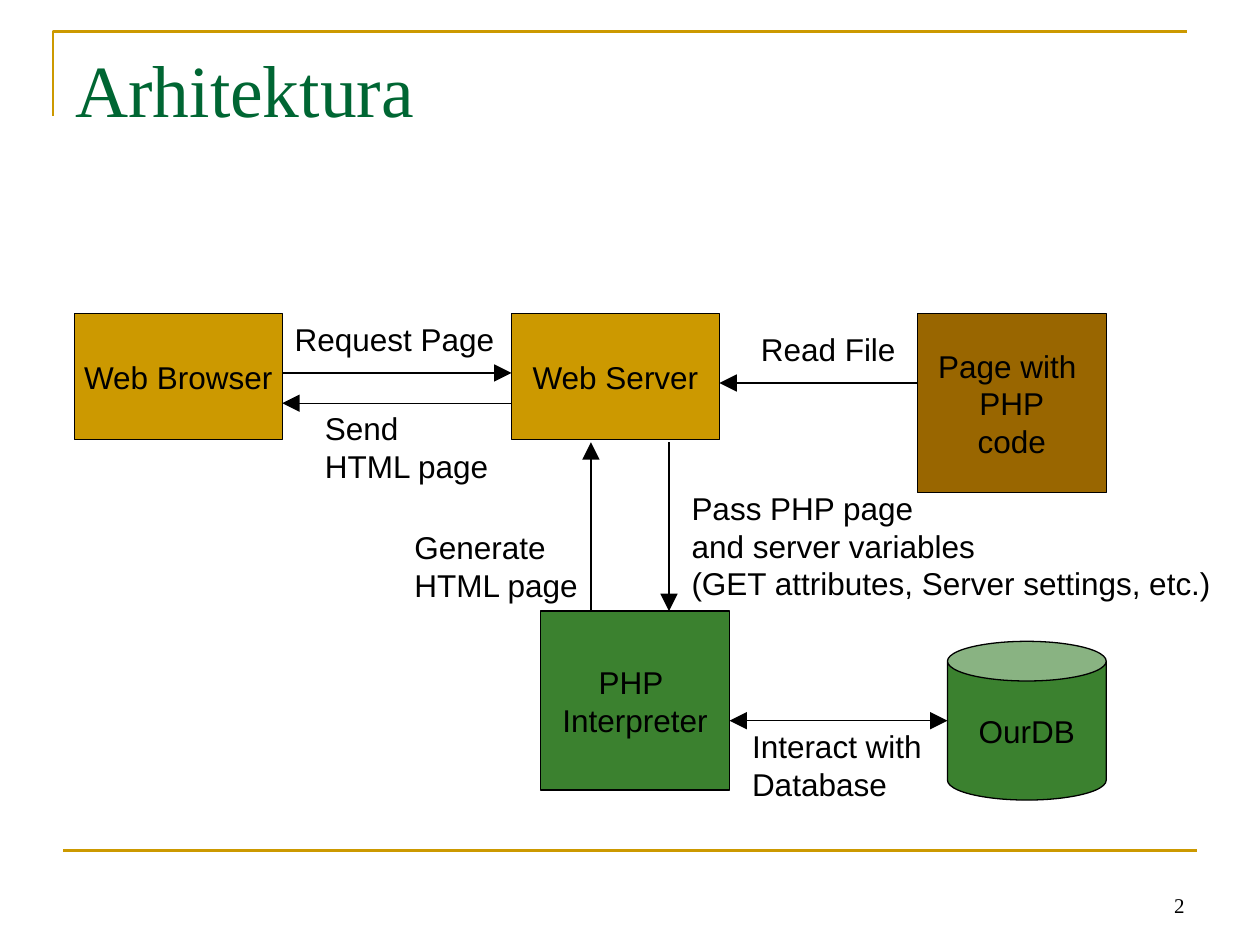
from lxml import etree
from pptx import Presentation
from pptx.dml.color import RGBColor
from pptx.enum.shapes import MSO_CONNECTOR, MSO_SHAPE
from pptx.enum.text import MSO_ANCHOR, MSO_AUTO_SIZE, PP_ALIGN
from pptx.oxml.ns import qn
from pptx.util import Inches, Pt

RECTANGLE, CAN = MSO_SHAPE.RECTANGLE, MSO_SHAPE.CAN
STRAIGHT = MSO_CONNECTOR.STRAIGHT
TOP, MIDDLE, BOTTOM = MSO_ANCHOR.TOP, MSO_ANCHOR.MIDDLE, MSO_ANCHOR.BOTTOM
LEFT, CENTER, RIGHT = PP_ALIGN.LEFT, PP_ALIGN.CENTER, PP_ALIGN.RIGHT
GROW = MSO_AUTO_SIZE.SHAPE_TO_FIT_TEXT

GOLD = RGBColor(0xCC, 0x99, 0x00)
BROWN = RGBColor(0x99, 0x66, 0x00)
GREEN = RGBColor(0x3B, 0x81, 0x2F)
TITLE_GREEN = RGBColor(0x00, 0x66, 0x33)
BLACK = RGBColor(0, 0, 0)
SANS, SERIF = "Arial", "Times New Roman"

# Diagram nodes: kind, box (left, top, width, height), fill, lines
NODES = [
    (RECTANGLE, (0.59, 2.49, 1.65, 1), GOLD, ["Web Browser"]),
    (RECTANGLE, (4.06, 2.49, 1.65, 1), GOLD, ["Web Server"]),
    (RECTANGLE, (7.28, 2.49, 1.5, 1.42), BROWN, ["Page with ", "PHP", "code"]),
    (RECTANGLE, (4.29, 4.85, 1.5, 1.42), GREEN, ["PHP ", "Interpreter"]),
    (CAN, (7.52, 5.09, 1.26, 1.26), GREEN, ["OurDB"]),
]

# Messages: arrow start, arrow end, two-way, label box, label lines
MESSAGES = [
    ((2.24, 2.96), (4.06, 2.96), False, (2.24, 2.49, 1.8, 0.4), ["Request Page"]),
    ((4.06, 3.2), (2.24, 3.2), False, (2.48, 3.2, 1.51, 0.7), ["Send", "HTML page"]),
    ((7.28, 3.04), (5.71, 3.04), False, (5.94, 2.57, 1.27, 0.4), ["Read File"]),
    ((5.31, 3.51), (5.31, 4.85), False, (5.39, 3.83, 4.33, 1),
     ["Pass PHP page", "and server variables",
      "(GET attributes, Server settings, etc.)"]),
    ((4.69, 4.85), (4.69, 3.51), False, (3.19, 4.14, 1.51, 0.7),
     ["Generate", "HTML page"]),
    ((7.52, 5.72), (5.79, 5.72), True, (5.87, 5.72, 1.55, 0.7),
     ["Interact with", "Database"]),
]


def write_lines(shape, lines, size=18, font=SANS, color=BLACK,
                align=LEFT, anchor=TOP, wrap=False):
    frame = shape.text_frame
    frame.word_wrap = wrap
    frame.vertical_anchor = anchor
    for index, line in enumerate(lines):
        paragraph = frame.add_paragraph() if index else frame.paragraphs[0]
        paragraph.alignment = align
        run = paragraph.add_run()
        run.text = line
        run.font.size = Pt(size)
        run.font.name = font
        run.font.color.rgb = color


def add_text(slide, box, lines, **style):
    shape = slide.shapes.add_textbox(*map(Inches, box))
    write_lines(shape, lines, **style)
    return shape


def add_line(slide, start, end, color, width):
    line = slide.shapes.add_connector(STRAIGHT, *map(Inches, start + end))
    line.line.color.rgb = color
    line.line.width = Pt(width)
    etree.SubElement(line._element.spPr, qn("a:effectLst"))
    return line


def add_arrow(slide, start, end, two_way):
    arrow = add_line(slide, start, end, BLACK, 0.75)
    outline = arrow.line._get_or_add_ln()
    for tag in (["a:headEnd"] if two_way else []) + ["a:tailEnd"]:
        etree.SubElement(outline, qn(tag), type="triangle", w="lg", len="lg")


def add_node(slide, kind, box, fill, lines):
    node = slide.shapes.add_shape(kind, *map(Inches, box))
    node.shadow.inherit = False
    node.fill.solid()
    node.fill.fore_color.rgb = fill
    node.line.color.rgb = BLACK
    node.line.width = Pt(0.75)
    write_lines(node, lines, align=CENTER, anchor=MIDDLE)


def add_frame(slide, left, top, width, height):
    """Corner bracket above the title and rule above the footer."""
    builder = slide.shapes.build_freeform(Inches(left), Inches(top + height))
    builder.add_line_segments(
        [(Inches(left), Inches(top)), (Inches(left + width), Inches(top))],
        close=False)
    bracket = builder.convert_to_shape()
    bracket.shadow.inherit = False
    bracket.fill.background()
    bracket.line.color.rgb = GOLD
    bracket.line.width = Pt(1.5)
    add_line(slide, (0.5, 6.75), (9.5, 6.75), GOLD, 1.5)


def add_diagram(slide):
    for node in NODES:
        add_node(slide, *node)
    for start, end, two_way, box, lines in MESSAGES:
        add_arrow(slide, start, end, two_way)
        label = add_text(slide, box, lines)
        label.text_frame.auto_size = GROW


def main():
    presentation = Presentation()
    presentation.slide_width = Inches(10)
    presentation.slide_height = Inches(7.5)
    slide = presentation.slides.add_slide(presentation.slide_layouts[6])

    add_frame(slide, 0.42, 0.25, 9, 0.67)
    # Title
    add_text(slide, (0.5, 0.3, 9, 1.25), ["Arhitektura"],
             size=42, font=SERIF, color=TITLE_GREEN, wrap=True)
    add_diagram(slide)
    # Slide number
    add_text(slide, (7.17, 6.83, 2.33, 0.5), ["2"], size=12, font=SERIF,
             align=RIGHT, anchor=BOTTOM, wrap=True)

    presentation.save("out.pptx")


if __name__ == "__main__":
    main()
